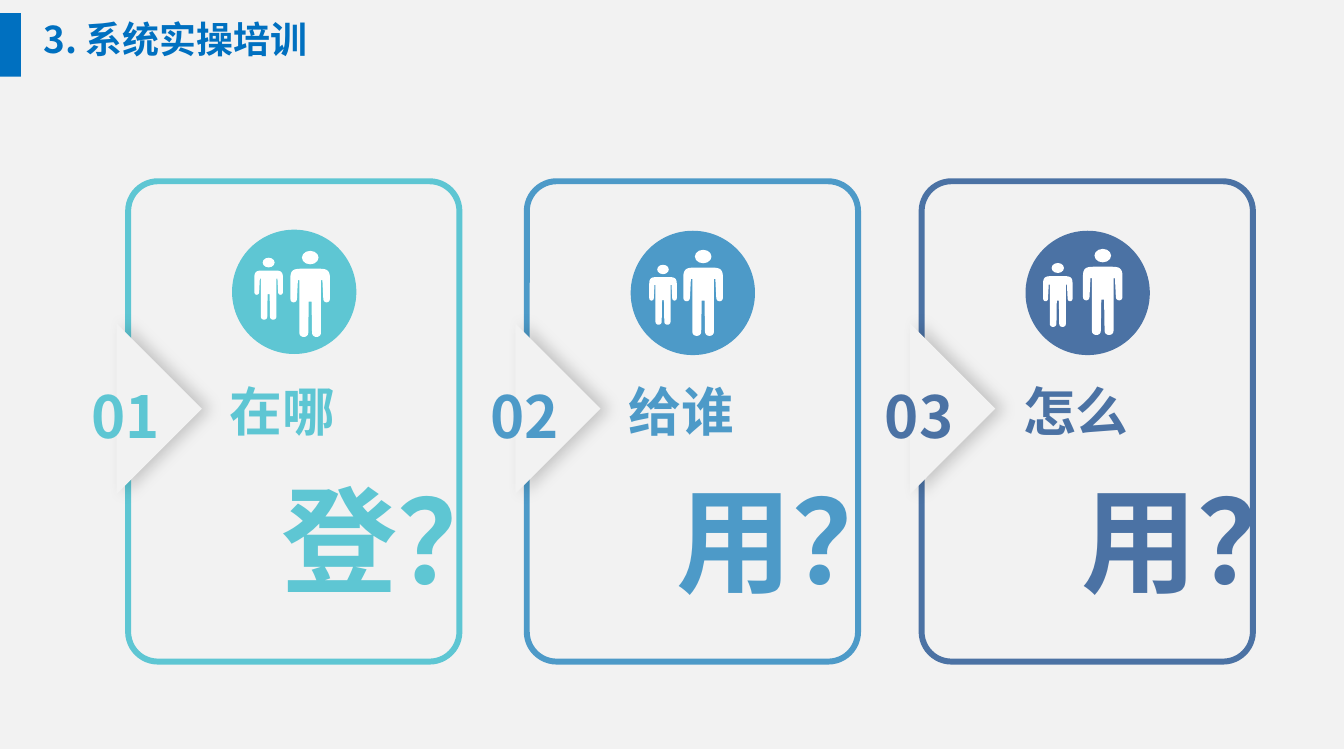
from lxml import etree
from pptx import Presentation
from pptx.dml.color import RGBColor
from pptx.enum.shapes import MSO_SHAPE
from pptx.enum.text import MSO_ANCHOR, MSO_AUTO_SIZE, PP_ALIGN
from pptx.oxml.ns import qn
from pptx.util import Pt

RECT, ROUND_RECT = MSO_SHAPE.RECTANGLE, MSO_SHAPE.ROUNDED_RECTANGLE
OVAL, TRIANGLE = MSO_SHAPE.OVAL, MSO_SHAPE.RIGHT_TRIANGLE
LEFT, CENTER = PP_ALIGN.LEFT, PP_ALIGN.CENTER
TOP, MIDDLE = MSO_ANCHOR.TOP, MSO_ANCHOR.MIDDLE
NO_FIT = MSO_AUTO_SIZE.NONE

BACKGROUND = RGBColor(0xF2, 0xF2, 0xF2)
WHITE = RGBColor(0xFF, 0xFF, 0xFF)
BLUE = RGBColor(0x00, 0x70, 0xC0)
TEAL = RGBColor(0x5E, 0xC6, 0xD3)
SKY = RGBColor(0x4D, 0x9A, 0xC8)
NAVY = RGBColor(0x4B, 0x72, 0xA4)

SHOULDER = ((-10, 0), (-18, 0), (-21, 2), (-21, 10))
HAND = ((-21, 32), (-21, 37), (-14, 37), (-14, 32))
ARMPIT = [(-13, 12), (-11.5, 12)]
FOOT = ((-11.5, 68), (-11.5, 74), (-2, 74), (-2, 68))
CROTCH = [(-1.5, 35)]
BODY_WIDTH = 42

CARDS = [
    ("01", "在哪", "登？", TEAL, 97.2, 174.2, 162.7,
     ((123.1, 203.8, 30), (95.8, 205.2, 21.6))),
    ("02", "给谁", "用？", SKY, 399.6, 175, 157.7,
     ((118.8, 203, 30), (92.9, 210.2, 20.9))),
    ("03", "怎么", "用？", NAVY, 699.1, 175, 172.8,
     ((122.4, 202.3, 30), (92.2, 209.5, 22.3))),
]


def bezier(a, b, c, d, steps=8):
    points = []
    for i in range(steps + 1):
        t = i / steps
        u = 1 - t
        points.append(tuple(
            u**3 * a[k] + 3 * u * u * t * b[k] + 3 * u * t * t * c[k] + t**3 * d[k]
            for k in (0, 1)))
    return points


def body_outline():
    half = bezier(*SHOULDER) + bezier(*HAND) + ARMPIT + bezier(*FOOT) + CROTCH
    return half + [(-x, y) for x, y in reversed(half)]


class Deck:
    font = "Noto Sans CJK SC"

    def __init__(self, width, height):
        self.prs = Presentation()
        self.prs.slide_width, self.prs.slide_height = Pt(width), Pt(height)
        self.s = self.prs.slides.add_slide(self.prs.slide_layouts[5])
        fill = self.s.background.fill
        fill.solid()
        fill.fore_color.rgb = BACKGROUND

    def paint(self, sp, fill=None, line=None):
        sp.shadow.inherit = False
        if fill is None:
            sp.fill.background()
        else:
            sp.fill.solid()
            sp.fill.fore_color.rgb = fill
        if line is None:
            sp.line.fill.background()
        else:
            sp.line.color.rgb = line
            sp.line.width = Pt(4.5)
        return sp

    def shape(self, kind, x, y, w, h, fill=None, line=None):
        sp = self.s.shapes.add_shape(kind, Pt(x), Pt(y), Pt(w), Pt(h))
        return self.paint(sp, fill, line)

    def set_text(self, sp, text, size, color, align, anchor):
        tf = sp.text_frame
        tf.text = text
        tf.word_wrap = True
        tf.auto_size = NO_FIT
        tf.vertical_anchor = anchor
        p = tf.paragraphs[0]
        p.alignment = align
        r = p.runs[0]
        r.font.name, r.font.size, r.font.bold = self.font, Pt(size), True
        r.font.color.rgb = color
        rPr = r._r.get_or_add_rPr()
        rPr.set("lang", "zh-CN")
        etree.SubElement(rPr, qn("a:ea")).set("typeface", self.font)
        return tf

    def title(self, text, x, y, w, h):
        sp = self.s.shapes.title
        sp.left, sp.top, sp.width, sp.height = Pt(x), Pt(y), Pt(w), Pt(h)
        tf = self.set_text(sp, text, 28, BLUE, LEFT, MIDDLE)
        tf.margin_left = tf.margin_right = Pt(9.4)
        tf.margin_top = tf.margin_bottom = Pt(5)

    def text(self, text, x, y, w, h, size, color):
        sp = self.s.shapes.add_textbox(Pt(x), Pt(y), Pt(w), Pt(h))
        p = self.set_text(sp, text, size, color, CENTER, TOP).paragraphs[0]
        p.line_spacing = 1.2
        p._p.get_or_add_pPr().set("hangingPunct", "1")

    def arrow(self, x, y, size):
        sp = self.shape(TRIANGLE, x, y, size, size, BACKGROUND)
        sp.rotation = 225
        effects = sp._element.spPr.find(qn("a:effectLst"))
        shadow = etree.SubElement(effects, qn("a:outerShdw"), blurRad=str(Pt(12)),
                                  dist=str(Pt(6)), dir="0", rotWithShape="0")
        color = etree.SubElement(shadow, qn("a:srgbClr"), val="000000")
        etree.SubElement(color, qn("a:alpha"), val="18000")

    def person(self, x, y, w):
        scale, middle = w / BODY_WIDTH, x + w / 2
        self.shape(OVAL, middle - 0.21 * w, y - 0.45 * w, 0.42 * w, 0.34 * w, WHITE)
        points = [(Pt(middle + px * scale), Pt(y + py * scale))
                  for px, py in body_outline()]
        builder = self.s.shapes.build_freeform(*points[0])
        builder.add_line_segments(points[1:], close=True)
        self.paint(builder.convert_to_shape(), WHITE)

    def card(self, label, topic, question, color, x, circle_top, question_width, people):
        sp = self.shape(ROUND_RECT, x, 137.5, 251.3, 364.3, line=color)
        sp.adjustments[0] = 0.09
        self.shape(OVAL, x + 78.8, circle_top, 94.3, 94.3, color)
        for dx, y, w in people:
            self.person(x + dx, y, w)
        self.arrow(x - 54.4, 264.2, 91.4)
        self.text(label, x - 39, 274.3, 74.2, 71.3, 44, color)
        self.text(topic, x + 62.3, 274.3, 109.4, 65.5, 40, color)
        self.text(question, x + 78.8, 330.5, question_width, 135.4, 88, color)


def main():
    deck = Deck(1019.5, 568.1)
    deck.shape(RECT, 0, 10, 15.8, 48.2, BLUE)
    for card in CARDS:
        deck.card(*card)
    deck.title("3. 系统实操培训", 23.8, 8.6, 440, 41)
    deck.prs.save("out.pptx")


if __name__ == "__main__":
    main()
